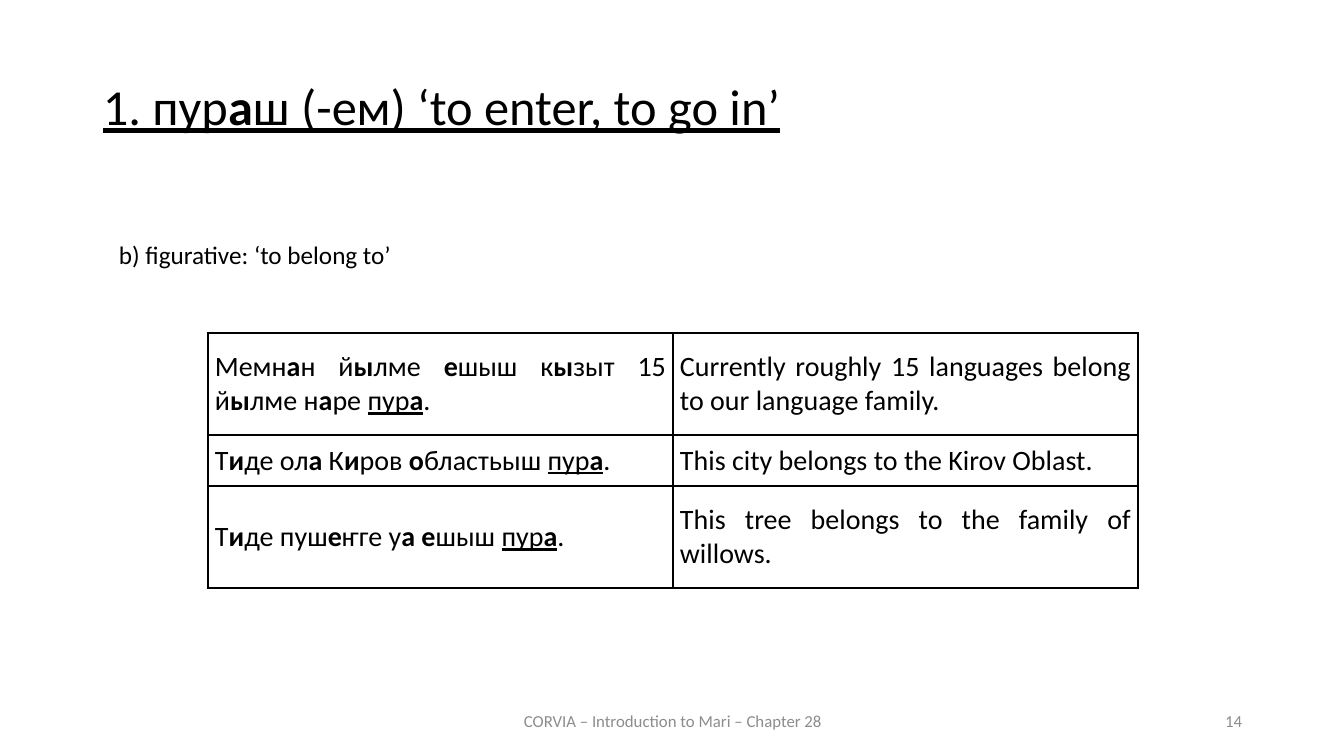
from lxml.etree import SubElement
from pptx import Presentation
from pptx.dml.color import RGBColor
from pptx.enum.text import MSO_ANCHOR as Anchor, PP_ALIGN as Align
from pptx.oxml.ns import qn
from pptx.util import Emu, Pt

PX_PER_INCH = 100.8
BLACK, GREY = "000000", "8C8C8C"
PURA = [("пур", "u"), ("а", "bu"), (".", "")]

TITLE = [("1. пур", "u"), ("а", "bu"), ("ш (-ем) ‘to enter, to go in’", "u")]
EXAMPLES = [
    ([("Мемн", ""), ("а", "b"), ("н й", ""), ("ы", "b"), ("лме ", ""),
      ("е", "b"), ("шыш к", ""), ("ы", "b"), ("зыт 15 й", ""), ("ы", "b"),
      ("лме н", ""), ("а", "b"), ("ре ", "")] + PURA,
     [("Currently roughly 15 languages belong to our language family.", "")]),
    ([("Т", ""), ("и", "b"), ("де ол", ""), ("а", "b"), (" К", ""),
      ("и", "b"), ("ров ", ""), ("о", "b"), ("бластьыш ", "")] + PURA,
     [("This city belongs to the Kirov Oblast.", "")]),
    ([("Т", ""), ("и", "b"), ("де пуш", ""), ("е", "b"), ("ҥге у", ""),
      ("а е", "b"), ("шыш ", "")] + PURA,
     [("This tree belongs to the family of willows.", "")]),
]
ROW_HEIGHTS = [102, 51, 102]
COLUMN_WIDTH = 465


def px(length):
    return Emu(round(length * 914400 / PX_PER_INCH))


def color(hex_value):
    return RGBColor.from_string(hex_value)


def add_runs(paragraph, runs, size, hex_value, align):
    paragraph.alignment = align
    for text, style in runs:
        run = paragraph.add_run()
        run.text = text
        run.font.name = "Calibri"
        run.font.size = Pt(size)
        run.font.color.rgb = color(hex_value)
        run.font.bold = "b" in style
        run.font.underline = "u" in style


def add_text(slide, box, runs, size, hex_value=BLACK, align=Align.LEFT, anchor=Anchor.TOP):
    frame = slide.shapes.add_textbox(*map(px, box)).text_frame
    frame.word_wrap = True
    frame.vertical_anchor = anchor
    paragraph = frame.paragraphs[0]
    add_runs(paragraph, runs, size, hex_value, align)
    return paragraph


def add_borders(cell):
    properties = cell._tc.get_or_add_tcPr()
    for position, side in enumerate(("a:lnL", "a:lnR", "a:lnT", "a:lnB")):
        line = SubElement(properties, qn(side), w=str(Pt(1)))
        properties.insert(position, line)
        fill = SubElement(line, qn("a:solidFill"))
        SubElement(fill, qn("a:srgbClr"), val=BLACK)


def fill_cell(cell, runs):
    cell.fill.background()
    cell.vertical_anchor = Anchor.MIDDLE
    cell.margin_left = cell.margin_right = px(7)
    cell.margin_top = cell.margin_bottom = 0
    add_runs(cell.text_frame.paragraphs[0], runs, 20, BLACK, Align.JUSTIFY)
    add_borders(cell)


def add_examples(slide, left, top):
    table = slide.shapes.add_table(
        len(EXAMPLES), 2, px(left), px(top), px(2 * COLUMN_WIDTH), px(sum(ROW_HEIGHTS))
    ).table
    table.first_row = table.horz_banding = False
    for column in table.columns:
        column.width = px(COLUMN_WIDTH)
    for row, height, example in zip(table.rows, ROW_HEIGHTS, EXAMPLES):
        row.height = px(height)
        for cell, runs in zip(row.cells, example):
            fill_cell(cell, runs)


def main():
    presentation = Presentation()
    presentation.slide_width = px(1344)
    presentation.slide_height = px(756)
    slide = presentation.slides.add_slide(presentation.slide_layouts[6])

    title = add_text(slide, (93, 77, 1159, 84), TITLE, 36, align=Align.JUSTIFY)
    title.line_spacing = 0.9
    title.space_before = Pt(12)
    add_text(slide, (109, 234, 672, 40), [("b) figurative: ‘to belong to’", "")], 18)
    add_examples(slide, 208, 333)
    add_text(slide, (446, 701, 454, 40), [("CORVIA – Introduction to Mari – Chapter 28", "")],
             12, GREY, Align.CENTER, Anchor.MIDDLE)
    add_text(slide, (950, 701, 302, 40), [("14", "")], 12, GREY, Align.RIGHT, Anchor.MIDDLE)

    presentation.save("out.pptx")


if __name__ == "__main__":
    main()
